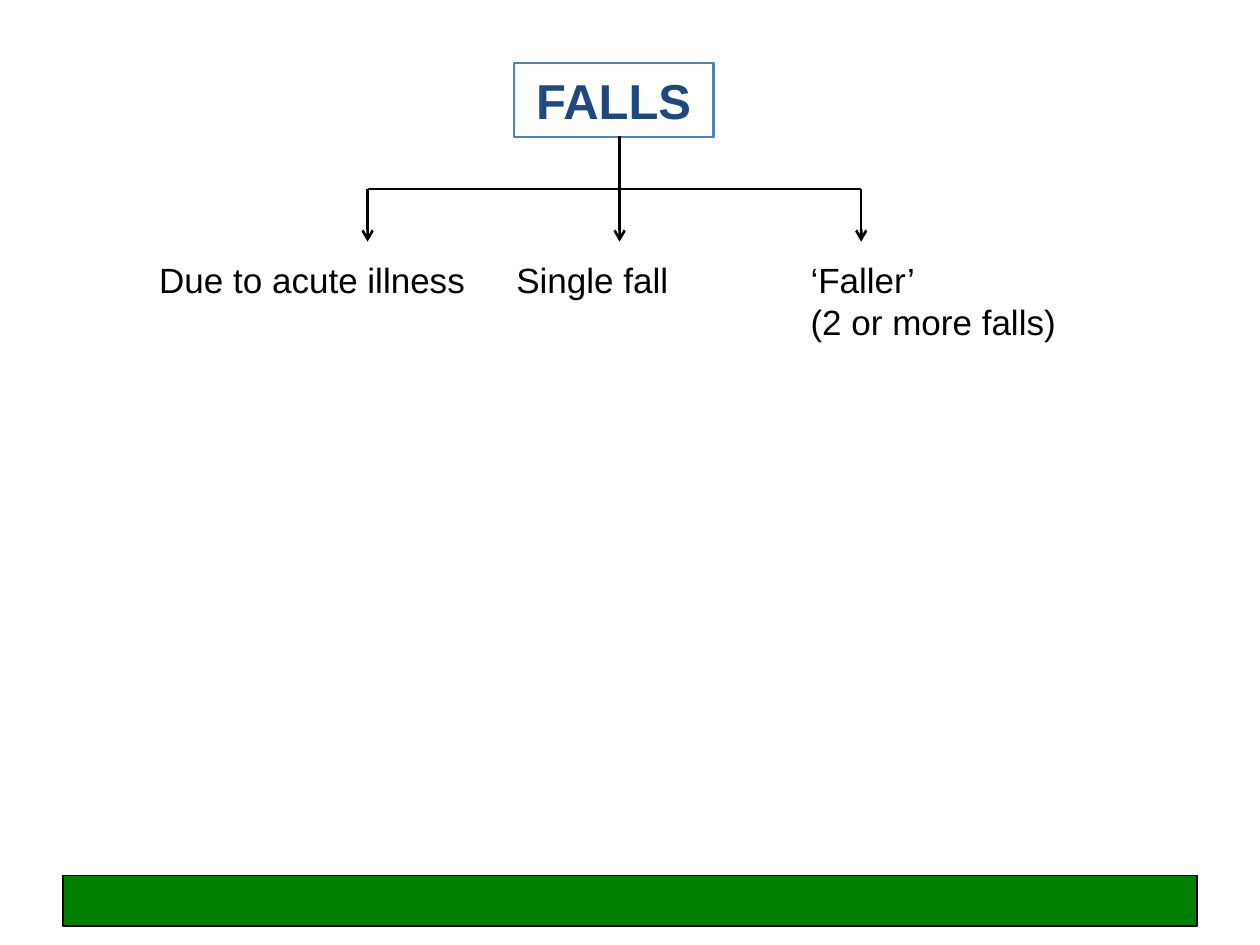
from lxml.etree import SubElement
from pptx import Presentation
from pptx.dml.color import RGBColor
from pptx.enum.shapes import MSO_CONNECTOR, MSO_SHAPE
from pptx.enum.text import MSO_ANCHOR, PP_ALIGN
from pptx.oxml.ns import qn
from pptx.util import Cm, Pt

# Content: text, arrow x, label left, label width, label height (cm)
TITLE = "FALLS"
BRANCHES = [
    ("Due to acute illness", 7.41, 2.96, 6.77, 1.11),
    ("Single fall", 12.49, 10.16, 4.66, 1.11),
    ("‘Faller’\n(2 or more falls)", 17.36, 16.09, 7.41, 1.96),
]
COLORS = {"bar": "008000", "black": "000000", "border": "4F81BD", "title": "1F497D"}
FONT = "Arial"

# Vertical levels of the tree (cm)
STEM_TOP, BRANCH_Y, ARROW_TIP, LABEL_TOP = 2.75, 3.81, 4.87, 5.08


def color(name):
    return RGBColor.from_string(COLORS[name])


def add_box(slide, left, top, width, height, line_color, line_width, fill=None):
    shape = slide.shapes.add_shape(
        MSO_SHAPE.RECTANGLE, Cm(left), Cm(top), Cm(width), Cm(height))
    shape.shadow.inherit = False
    if fill:
        shape.fill.solid()
        shape.fill.fore_color.rgb = color(fill)
    else:
        shape.fill.background()
    shape.line.color.rgb = color(line_color)
    shape.line.width = Pt(line_width)
    return shape


def write(shape, text, size, font_color, bold=False, align=PP_ALIGN.LEFT,
          anchor=MSO_ANCHOR.TOP):
    frame = shape.text_frame
    frame.text = text
    frame.word_wrap = True
    frame.vertical_anchor = anchor
    for paragraph in frame.paragraphs:
        paragraph.alignment = align
        for run in paragraph.runs:
            run.font.name = FONT
            run.font.size = Pt(size)
            run.font.bold = bold
            run.font.color.rgb = color(font_color)


def add_line(slide, x1, y1, x2, y2, arrow=False):
    connector = slide.shapes.add_connector(
        MSO_CONNECTOR.STRAIGHT, Cm(x1), Cm(y1), Cm(x2), Cm(y2))
    connector.line.color.rgb = color("black")
    connector.line.width = Pt(1.5)
    if arrow:
        SubElement(connector.line._get_or_add_ln(), qn("a:tailEnd"), type="arrow")
    SubElement(connector._element.spPr, qn("a:effectLst"))


def main():
    presentation = Presentation()
    presentation.slide_width, presentation.slide_height = Cm(25.4), Cm(19.05)
    slide = presentation.slides.add_slide(presentation.slide_layouts[6])

    # Footer bar and title box
    add_box(slide, 1.27, 17.65, 22.86, 1.02, "black", 0.75, fill="bar")
    title = add_box(slide, 10.36, 1.27, 4.02, 1.49, "border", 1.5)
    write(title, TITLE, 28, "title", True, PP_ALIGN.CENTER, MSO_ANCHOR.MIDDLE)

    # Stem and crossbar
    arrow_xs = [branch[1] for branch in BRANCHES]
    add_line(slide, arrow_xs[1], STEM_TOP, arrow_xs[1], BRANCH_Y)
    add_line(slide, arrow_xs[0], BRANCH_Y, arrow_xs[-1], BRANCH_Y)

    # Arrows with their labels
    for text, x, left, width, height in BRANCHES:
        add_line(slide, x, BRANCH_Y, x, ARROW_TIP, arrow=True)
        label = slide.shapes.add_textbox(
            Cm(left), Cm(LABEL_TOP), Cm(width), Cm(height))
        write(label, text, 20, "black")

    presentation.save("out.pptx")


if __name__ == "__main__":
    main()
